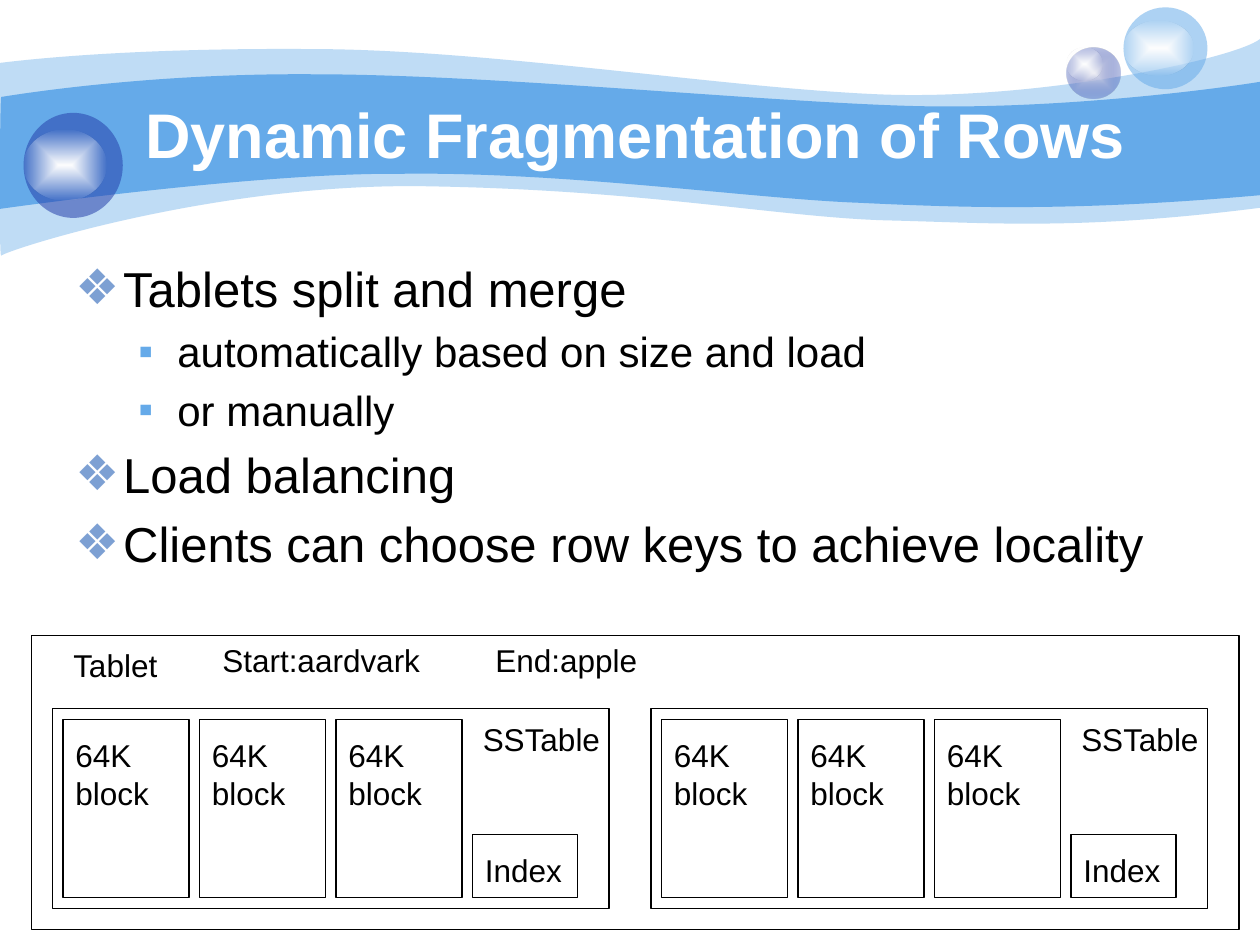
from dataclasses import dataclass

from lxml.etree import SubElement
from pptx import Presentation
from pptx.dml.color import RGBColor
from pptx.enum.shapes import MSO_SHAPE as Shape
from pptx.enum.text import MSO_ANCHOR as Anchor, MSO_AUTO_SIZE as AutoSize, PP_ALIGN as Align
from pptx.oxml.ns import qn
from pptx.util import Emu, Inches, Pt

CELL = Inches(1) // 12  # the slide is a grid of 120 columns by 90 rows


@dataclass(frozen=True)
class Theme:
    font: str = "Arial"
    ink: str = "000000"
    white: str = "FFFFFF"
    sky: str = "65AAE9"
    navy: str = "233DA9"
    mist: str = "E1E2ED"
    bullet: str = "7DA0D3"
    title: int = 36
    label: int = 18
    line: float = 0.75


@dataclass(frozen=True)
class Box:
    col: float
    row: float
    cols: float
    rows: float

    def shifted(self, cols: float) -> "Box":
        return Box(self.col + cols, self.row, self.cols, self.rows)

    def emu(self) -> list[Emu]:
        return [Emu(round(v * CELL)) for v in (self.col, self.row, self.cols, self.rows)]


@dataclass(frozen=True)
class Label:
    text: str
    box: Box
    wrap: bool = False


@dataclass(frozen=True)
class Stop:
    color: str
    opacity: int = 100


@dataclass(frozen=True)
class Sphere:
    body: Box
    shine: Box
    stops: tuple[Stop, ...]


@dataclass(frozen=True)
class Band:
    """Start point and cubic segments in inches; a pair of numbers is a straight line."""
    start: tuple[float, float]
    segments: tuple[tuple[float, ...], ...]
    opacity: int


@dataclass(frozen=True)
class Level:
    char: str
    color: str
    size: int
    margin: float
    hang: float

    @property
    def before(self) -> float:
        return self.size * 0.2


T = Theme()
BANDS = (
    Band((0, 0.5), ((0.24, 0.47, 1.07, 0.38, 2.47, 0.39), (3.86, 0.39, 5.75, 0.7, 6.99, 0.75),
                    (8.22, 0.8, 9.8, 0.47, 10, 0.31), (10, 1.65),
                    (8.58, 1.83, 7.87, 1.77, 7.05, 1.75), (6.22, 1.73, 5.15, 1.51, 3.43, 1.48),
                    (1.72, 1.44, 0.04, 1.99, 0.01, 2.03), (-0.01, 2.08, 0, 0.75, 0, 0.5)), 41),
    Band((0.01, 0.77), ((0.02, 0.77, 1.1, 0.58, 2.48, 0.59), (3.86, 0.59, 5.95, 0.8, 7.18, 0.84),
                        (8.41, 0.88, 9.76, 0.69, 10, 0.65), (10, 1.55),
                        (8.53, 1.68, 7.65, 1.65, 6.82, 1.61), (5.99, 1.58, 4.47, 1.36, 3.17, 1.38),
                        (2.03, 1.37, -0.02, 1.66, -0.01, 1.66), (0, 1.66, 0, 0.77, 0.01, 0.77)), 100),
)
SHINE = (Stop(T.white), Stop(T.white, 0))
SPHERES = (
    Sphere(Box(101.6, 4.5, 5.1, 4.9), Box(101.6, 4.5, 3.4, 3.2), (Stop(T.mist), Stop(T.navy, 31))),
    Sphere(Box(107, 0.7, 8, 7.8), Box(107, 2, 6.7, 5.2), (Stop(T.sky, 53),)),
    Sphere(Box(2.25, 10.75, 9.45, 10), Box(2.25, 12.4, 7.9, 6.7), (Stop(T.navy, 53),)),
)
TITLE = Box(12, 9, 97, 7.4)
BODY = Box(6, 24, 108, 59)
MAIN = Level("❖", T.bullet, 28, 0.38, 0.38)
SUB = Level("▪", T.sky, 24, 0.81, 0.31)
BULLETS = (
    (MAIN, "Tablets split and merge"),
    (SUB, "automatically based on size and load"),
    (SUB, "or manually"),
    (MAIN, "Load balancing"),
    (MAIN, "Clients can choose row keys to achieve locality"),
)
TABLET = Box(3, 60.5, 115, 28)
TABLET_LABELS = (
    Label("Tablet", Box(5.8, 60.95, 10.8, 4.8)),
    Label("Start:aardvark", Box(20, 60.5, 24, 4.8), True),
    Label("End:apple", Box(46, 60.5, 18, 4.8), True),
)
SSTABLE, SSTABLE_STEP = Box(5, 67.5, 53, 19), 57
BLOCK, BLOCK_STEP, BLOCK_COUNT = Box(6, 68.5, 12, 17), 13, 3
BLOCK_LABEL = Label("64K block", Box(6, 69.5, 11, 8.4), True)
INDEX = Box(45, 79.5, 10, 6)
INDEX_LABEL = Label("Index", Box(45, 80.5, 9.7, 4.8))
SSTABLE_LABEL = Label("SSTable", Box(44.8, 68, 13.9, 4.8))


def rgb(color: str) -> RGBColor:
    return RGBColor.from_string(color)


def add_color(parent, stop: Stop) -> None:
    clr = SubElement(parent, qn("a:srgbClr"), val=stop.color)
    if stop.opacity < 100:
        SubElement(clr, qn("a:alpha"), val=str(stop.opacity * 1000))


def paint(sp, stops: tuple[Stop, ...]) -> None:
    """Fill with one colour, or with a gradient running out from the centre."""
    sp.shadow.inherit = False
    sp.line.fill.background()
    sp.fill.solid()
    sp.fill.fore_color.rgb = rgb(T.white)
    solid = sp._element.spPr.find(qn("a:solidFill"))
    if len(stops) == 1:
        solid.remove(solid[0])
        add_color(solid, stops[0])
        return
    grad = solid.makeelement(qn("a:gradFill"), {"rotWithShape": "1"})
    solid.getparent().replace(solid, grad)
    gs_list = SubElement(grad, qn("a:gsLst"))
    for i, stop in enumerate(stops):
        add_color(SubElement(gs_list, qn("a:gs"), pos=str(i * 100000)), stop)
    path = SubElement(grad, qn("a:path"), {"path": "shape"})
    SubElement(path, qn("a:fillToRect"), {side: "50000" for side in "ltrb"})


def add_band(shapes, band: Band) -> None:
    """Draw the control points as lines, then join each three into one cubic curve."""
    points = [(Inches(x), Inches(y)) for seg in band.segments for x, y in zip(seg[::2], seg[1::2])]
    builder = shapes.build_freeform(*map(Inches, band.start))
    builder.add_line_segments(points, close=True)
    sp = builder.convert_to_shape()
    lines = iter(list(sp._element.iter(qn("a:lnTo"))))
    for seg in band.segments:
        first = next(lines)
        if len(seg) == 2:
            continue
        cubic = first.makeelement(qn("a:cubicBezTo"), {})
        first.addprevious(cubic)
        for line in (first, next(lines), next(lines)):
            cubic.append(line[0])
            line.getparent().remove(line)
    paint(sp, (Stop(T.sky, band.opacity),))


def add_sphere(shapes, sphere: Sphere) -> None:
    group = shapes.add_group_shape().shapes
    for box, stops in ((sphere.body, sphere.stops), (sphere.shine, SHINE)):
        paint(group.add_shape(Shape.OVAL, *box.emu()), stops)


def add_frame(shapes, box: Box) -> None:
    sp = shapes.add_shape(Shape.RECTANGLE, *box.emu())
    sp.shadow.inherit = False
    sp.fill.background()
    sp.line.color.rgb = rgb(T.ink)
    sp.line.width = Pt(T.line)


def write(p, text: str, size: int, color: str = T.ink, bold: bool = False) -> None:
    r = p.add_run()
    r.text = text
    for name, value in {"name": T.font, "size": Pt(size), "bold": bold}.items():
        setattr(r.font, name, value)
    r.font.color.rgb = rgb(color)


def add_label(shapes, label: Label, shift: float = 0) -> None:
    tf = shapes.add_textbox(*label.box.shifted(shift).emu()).text_frame
    tf.word_wrap = label.wrap
    tf.auto_size = AutoSize.SHAPE_TO_FIT_TEXT
    write(tf.paragraphs[0], label.text, T.label)


def add_bullets(shapes) -> None:
    tf = shapes.add_textbox(*BODY.emu()).text_frame
    tf.word_wrap = True
    for i, (level, text) in enumerate(BULLETS):
        p = tf.add_paragraph() if i else tf.paragraphs[0]
        p.level = int(level is SUB)
        pPr = p._p.get_or_add_pPr()
        pPr.set("marL", str(Inches(level.margin)))
        pPr.set("indent", str(-Inches(level.hang)))
        add_color(SubElement(pPr, qn("a:buClr")), Stop(level.color))
        SubElement(pPr, qn("a:buFont"), typeface=T.font)
        SubElement(pPr, qn("a:buChar"), char=level.char)
        p.space_before = Pt(level.before if i else 0)
        write(p, text, level.size)


def set_title(shapes, text: str) -> None:
    """Place the title above the bands drawn so far."""
    sp = shapes.title
    shapes._spTree.append(sp._element)
    for name, value in zip(("left", "top", "width", "height"), TITLE.emu()):
        setattr(sp, name, value)
    tf = sp.text_frame
    for name, value in {"vertical_anchor": Anchor.MIDDLE, "word_wrap": True, "auto_size": AutoSize.NONE}.items():
        setattr(tf, name, value)
    tf.paragraphs[0].alignment = Align.CENTER
    write(tf.paragraphs[0], text, T.title, T.white, True)


def add_sstable(shapes, shift: float) -> None:
    block_shifts = [shift + i * BLOCK_STEP for i in range(BLOCK_COUNT)]
    for block_shift in block_shifts:
        add_frame(shapes, BLOCK.shifted(block_shift))
    add_frame(shapes, INDEX.shifted(shift))
    add_label(shapes, INDEX_LABEL, shift)
    add_frame(shapes, SSTABLE.shifted(shift))
    for block_shift in block_shifts:
        add_label(shapes, BLOCK_LABEL, block_shift)
    add_label(shapes, SSTABLE_LABEL, shift)


def main() -> None:
    prs = Presentation()
    prs.slide_width, prs.slide_height = 120 * CELL, 90 * CELL
    shapes = prs.slides.add_slide(prs.slide_layouts[5]).shapes
    for band in BANDS:
        add_band(shapes, band)
    for sphere in SPHERES:
        add_sphere(shapes, sphere)
    set_title(shapes, "Dynamic Fragmentation of Rows")
    add_bullets(shapes)
    for i in range(2):
        add_sstable(shapes, i * SSTABLE_STEP)
    add_frame(shapes, TABLET)
    for label in TABLET_LABELS:
        add_label(shapes, label)
    prs.save("out.pptx")


if __name__ == "__main__":
    main()
